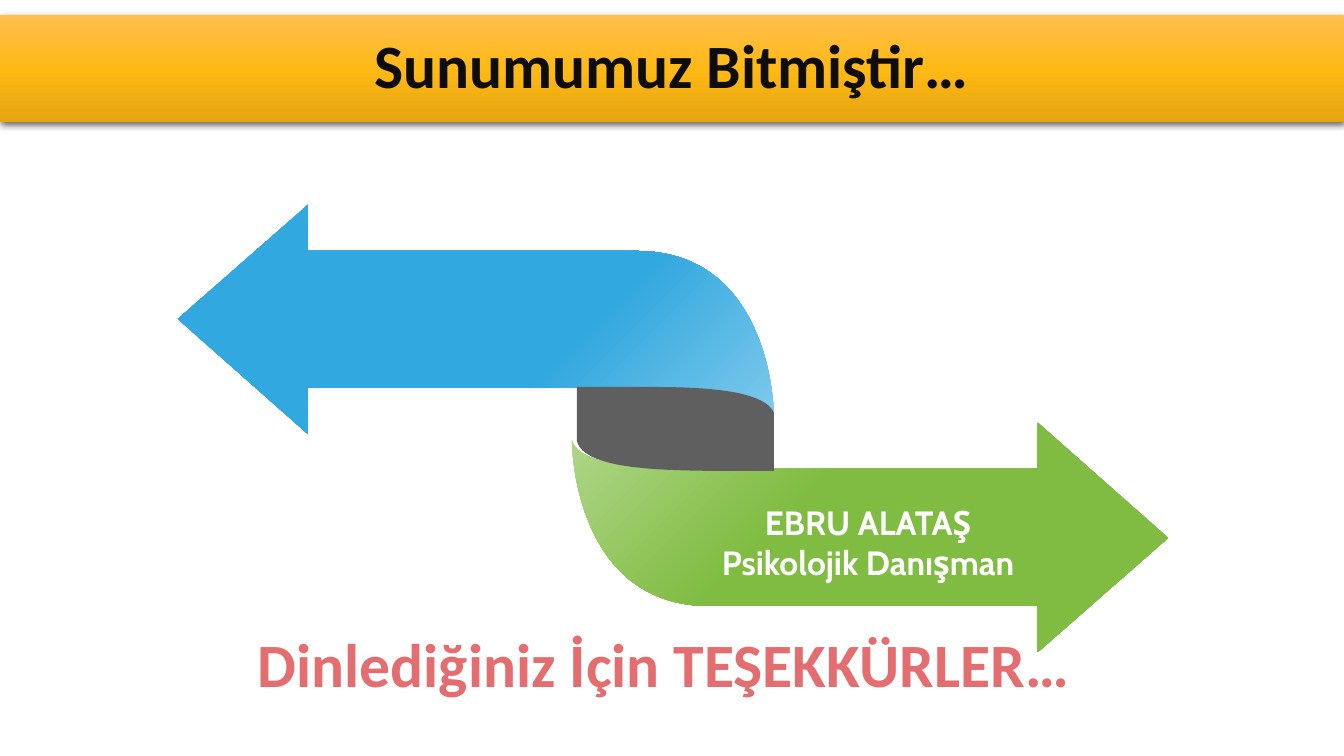
from copy import deepcopy

from lxml.etree import SubElement
from pptx import Presentation
from pptx.dml.color import RGBColor
from pptx.enum.text import MSO_ANCHOR, MSO_AUTO_SIZE, PP_ALIGN
from pptx.oxml.ns import qn
from pptx.util import Emu, Pt

PX = 12192000 / 1344

WHITE = RGBColor(0xFF, 0xFF, 0xFF)
BLACK = RGBColor(0x00, 0x00, 0x00)
INK = RGBColor(0x0D, 0x0D, 0x0D)
CORAL = RGBColor(0xE4, 0x6D, 0x70)
GRAY = RGBColor(0x5F, 0x5F, 0x5F)
BLUE_STOPS = [(0, RGBColor(0x83, 0xCB, 0xEC)), (36, RGBColor(0x31, 0xA8, 0xDF))]
GREEN_STOPS = [(0, RGBColor(0xB2, 0xD7, 0x8C)), (38, RGBColor(0x7F, 0xBC, 0x41))]
GOLD_STOPS = [(0, RGBColor(0xFF, 0xBF, 0x4E)), (50, RGBColor(0xFF, 0xB9, 0x15)),
              (100, RGBColor(0xE5, 0xA5, 0x10))]

ARROW_W, ARROW_H = 596, 229
ARROW = [[(459, 46)], [(130, 46)], [(130, 0)], [(0, 114)], [(130, 229)], [(130, 183)], [(459, 183)],
         [(503, 183), (588, 182), (596, 212)], [(596, 183), (583, 46), (459, 46)]]
FOLD = [[(137, 85)], [(197, 85)], [(197, 27)], [(186, 0), (103, 1), (61, 1)],
        [(0, 1)], [(0, 55)], [(7, 85), (94, 84), (137, 85)]]


def px(n):
    """Turn px into EMU."""
    return Emu(round(n * PX))


def gradient(sp, stops, angle):
    """Fill a shape with a linear gradient at a clockwise angle."""
    sp.fill.gradient()
    sp.fill.gradient_angle = -angle % 360
    gs_list = next(sp.element.iter(qn("a:gsLst")))
    for _ in stops[2:]:
        gs_list.append(deepcopy(gs_list[-1]))
    for gs, (position, color) in zip(sp.fill.gradient_stops, stops):
        gs.color.rgb = color
        gs.position = position / 100


def add_outline(s, x, y, steps):
    """Draw a closed outline of lines (one point) and cubic curves (three points)."""
    pts = [(px(x + a), px(y + b)) for step in steps for a, b in step]
    builder = s.shapes.build_freeform(*pts[0])
    builder.add_line_segments(pts[1:], close=True)
    sp = builder.convert_to_shape()
    lines = iter(list(sp.element.iter(qn("a:lnTo"))))
    for step in steps[1:]:
        first = next(lines)
        if len(step) == 3:
            first.tag = qn("a:cubicBezTo")
            for _ in step[1:]:
                line = next(lines)
                first.append(line[0])
                line.getparent().remove(line)
    sp.line.fill.background()
    sp.shadow.inherit = False
    return sp


def write(tf, lines, font, size, color, align):
    """Write bold paragraphs into a text frame."""
    tf.text = "\n".join(lines)
    for p in tf.paragraphs:
        p.alignment = align
        p.font.name = font
        p.font.size = Pt(size)
        p.font.bold = True
        p.font.color.rgb = color


def add_text(s, x, y, w, h, lines, font, size, color, align, wrap):
    """Add a text box that grows with its text."""
    tf = s.shapes.add_textbox(px(x), px(y), px(w), px(h)).text_frame
    tf.word_wrap = wrap
    tf.auto_size = MSO_AUTO_SIZE.SHAPE_TO_FIT_TEXT
    write(tf, lines, font, size, color, align)


def title_bar(s, x, y, w, h, text):
    """Turn the title placeholder into a gold bar with a shadow."""
    sp = s.shapes.title
    sp.left, sp.top, sp.width, sp.height = px(x), px(y), px(w), px(h)
    gradient(sp, GOLD_STOPS, 90)
    sp.line.fill.background()
    effects = SubElement(sp.element.spPr, qn("a:effectLst"))
    shadow = SubElement(effects, qn("a:outerShdw"), blurRad=str(Pt(4.5)), dist=str(Pt(1.5)),
                        dir="5400000", rotWithShape="0")
    color = SubElement(shadow, qn("a:srgbClr"), val=str(BLACK))
    SubElement(color, qn("a:alpha"), val="63000")
    tf = sp.text_frame
    tf.auto_size = MSO_AUTO_SIZE.NONE
    tf.vertical_anchor = MSO_ANCHOR.MIDDLE
    write(tf, [text], "Calibri", 44, INK, PP_ALIGN.CENTER)
    tf.paragraphs[0].line_spacing = 0.9


def folded_arrows(s, x, y):
    """Draw two opposite arrows joined by a fold, with the speaker's name."""
    turned = [[(ARROW_W - a, ARROW_H - b) for a, b in step] for step in ARROW]
    gradient(add_outline(s, x, y, ARROW), BLUE_STOPS, 225)
    gradient(add_outline(s, x + 394, y + 218, turned), GREEN_STOPS, 45)
    fold = add_outline(s, x + 399, y + 181, FOLD)
    fold.fill.solid()
    fold.fill.fore_color.rgb = GRAY
    add_text(s, x + 515, y + 292, 350, 92, ["EBRU ALATAŞ", "Psikolojik Danışman"],
             "Cabin", 24, WHITE, PP_ALIGN.CENTER, False)


def main():
    """Build the closing slide."""
    prs = Presentation()
    prs.slide_width, prs.slide_height = px(1344), px(756)
    s = prs.slides.add_slide(prs.slide_layouts[5])
    folded_arrows(s, 178, 205)
    title_bar(s, 0, 15, 1344, 107, "Sunumumuz Bitmiştir…")
    add_text(s, 248, 621, 912, 85, ["Dinlediğiniz İçin TEŞEKKÜRLER…"],
             "Calibri", 44, CORAL, PP_ALIGN.LEFT, True)
    prs.save("out.pptx")


if __name__ == "__main__":
    main()
